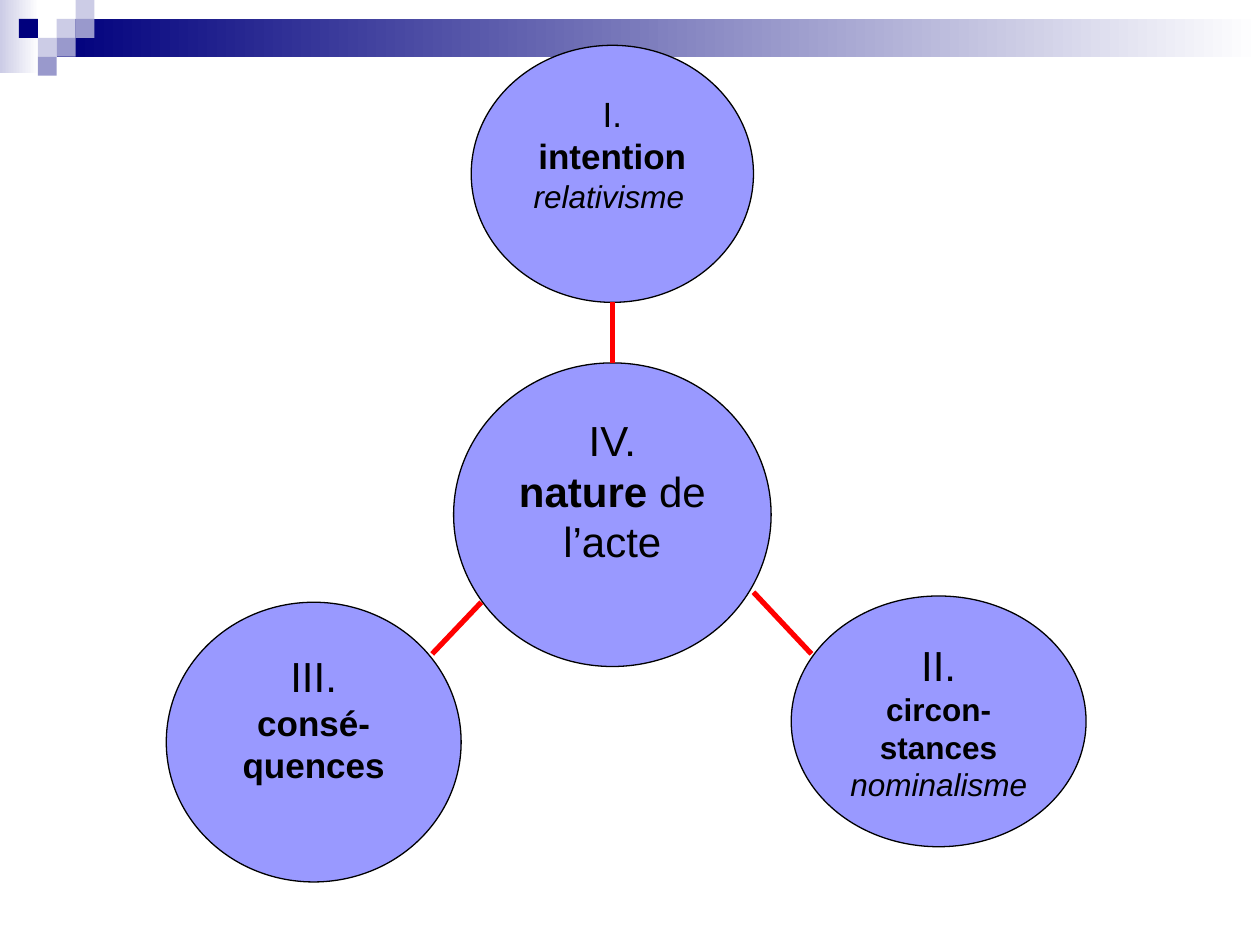
from dataclasses import dataclass

from lxml.etree import SubElement
from pptx import Presentation
from pptx.dml.color import RGBColor
from pptx.enum.shapes import MSO_CONNECTOR, MSO_SHAPE
from pptx.enum.text import MSO_ANCHOR, PP_ALIGN
from pptx.oxml.ns import qn
from pptx.util import Inches, Pt

COLUMNS, ROWS = 1000, 750
TILE = 15


@dataclass(frozen=True)
class Theme:
    font: str = "Arial"
    large: int = 24
    medium: int = 20
    small: int = 18
    navy: str = "00007D"
    pale: str = "CCCCE6"
    mid: str = "9999CC"
    white: str = "FFFFFF"
    disc: str = "9999FF"
    ink: str = "000000"
    spoke: str = "FF0000"
    outline: float = 0.75
    spoke_width: int = 3


THEME = Theme()


@dataclass(frozen=True)
class Area:
    column: float
    row: float
    columns: float
    rows: float


@dataclass(frozen=True)
class Span:
    text: str
    size: int
    bold: bool = False
    italic: bool = False


@dataclass(frozen=True)
class Line:
    spans: tuple[Span, ...]
    align: PP_ALIGN = PP_ALIGN.CENTER


@dataclass(frozen=True)
class Disc:
    area: Area
    lines: tuple[Line, ...]
    lift: float = 0


@dataclass(frozen=True)
class Spoke:
    start: tuple[float, float]
    end: tuple[float, float]


@dataclass(frozen=True)
class Tile:
    column: int
    row: int
    color: str


BANDS = (
    (Area(0, 0, 31, 58), THEME.pale),
    (Area(45, 15, 955, 30), THEME.navy),
)

TILES = (
    Tile(3, 1, THEME.pale),
    Tile(4, 0, THEME.pale),
    Tile(4, 1, THEME.mid),
    Tile(2, 2, THEME.pale),
    Tile(1, 1, THEME.navy),
    Tile(3, 2, THEME.mid),
    Tile(2, 3, THEME.mid),
)

DISCS = (
    Disc(Area(360, 288, 252, 241), (
        Line((Span("IV.", THEME.large),)),
        Line((Span("nature ", THEME.large, bold=True), Span("de l’acte", THEME.large))),
    ), lift=THEME.large),
    Disc(Area(374, 36, 224, 204), (
        Line((Span("I.", THEME.medium),)),
        Line((Span("intention", THEME.medium, bold=True),)),
        Line((Span(" relativisme", THEME.small, italic=True),), PP_ALIGN.LEFT),
    ), lift=THEME.medium),
    Disc(Area(132, 478, 234, 222), (
        Line((Span("III.", THEME.large),)),
        Line((Span("consé-quences", THEME.medium, bold=True),)),
    ), lift=THEME.large),
    Disc(Area(628, 473, 234, 199), (
        Line((Span("II.", THEME.large),)),
        Line((Span("circon-", THEME.small, bold=True),)),
        Line((Span("stances", THEME.small, bold=True),)),
        Line((Span("nominalisme", THEME.small, italic=True),)),
    )),
)

SPOKES = (
    Spoke((486, 288), (486, 240)),
    Spoke((343, 519), (382, 478)),
    Spoke((644, 519), (598, 470)),
)


def color(value: str) -> RGBColor:
    return RGBColor.from_string(value)


def grid(cells: float) -> int:
    return Inches(cells * 10 / COLUMNS)


def add_shape(page, kind: MSO_SHAPE, area: Area):
    shape = page.shapes.add_shape(
        kind, grid(area.column), grid(area.row), grid(area.columns), grid(area.rows)
    )
    shape.shadow.inherit = False
    shape.line.fill.background()
    return shape


def draw_band(page, area: Area, start: str) -> None:
    fill = add_shape(page, MSO_SHAPE.RECTANGLE, area).fill
    fill.gradient()
    fill.gradient_angle = 0
    for stop, value, position in zip(fill.gradient_stops, (start, THEME.white), (0, 1)):
        stop.color.rgb = color(value)
        stop.position = position


def draw_tile(page, tile: Tile) -> None:
    area = Area(tile.column * TILE, tile.row * TILE, TILE, TILE)
    if tile.column < 4:
        area = Area(tile.column * TILE, tile.row * TILE, TILE, TILE)
    shape = add_shape(page, MSO_SHAPE.RECTANGLE, area)
    shape.fill.solid()
    shape.fill.fore_color.rgb = color(tile.color)


def add_text(para, text: str, *, size: int, bold: bool = False, italic: bool = False) -> None:
    span = para.add_run()
    span.text = text
    span.font.name = THEME.font
    span.font.size = Pt(size)
    span.font.bold = bold
    span.font.italic = italic
    span.font.color.rgb = color(THEME.ink)


def draw_disc(page, disc: Disc) -> None:
    shape = add_shape(page, MSO_SHAPE.OVAL, disc.area)
    shape.fill.solid()
    shape.fill.fore_color.rgb = color(THEME.disc)
    shape.line.color.rgb = color(THEME.ink)
    shape.line.width = Pt(THEME.outline)
    box = shape.text_frame
    box.word_wrap = True
    box.vertical_anchor = MSO_ANCHOR.MIDDLE
    box.margin_bottom = Inches(0.05) + Pt(disc.lift * 1.15)
    for index, line in enumerate(disc.lines):
        para = box.add_paragraph() if index else box.paragraphs[0]
        para.alignment = line.align
        for span in line.spans:
            add_text(para, span.text, size=span.size, bold=span.bold, italic=span.italic)


def draw_spoke(page, spoke: Spoke) -> None:
    points = [grid(value) for value in (*spoke.start, *spoke.end)]
    connector = page.shapes.add_connector(MSO_CONNECTOR.STRAIGHT, *points)
    connector.line.color.rgb = color(THEME.spoke)
    connector.line.width = Pt(THEME.spoke_width)
    SubElement(connector._element.spPr, qn("a:effectLst"))


def main() -> None:
    deck = Presentation()
    deck.slide_width, deck.slide_height = grid(COLUMNS), grid(ROWS)
    page = deck.slides.add_slide(deck.slide_layouts[6])
    for area, start in BANDS:
        draw_band(page, area, start)
    for tile in TILES:
        draw_tile(page, tile)
    for disc in DISCS:
        draw_disc(page, disc)
    for spoke in SPOKES:
        draw_spoke(page, spoke)
    deck.save("out.pptx")


if __name__ == "__main__":
    main()
